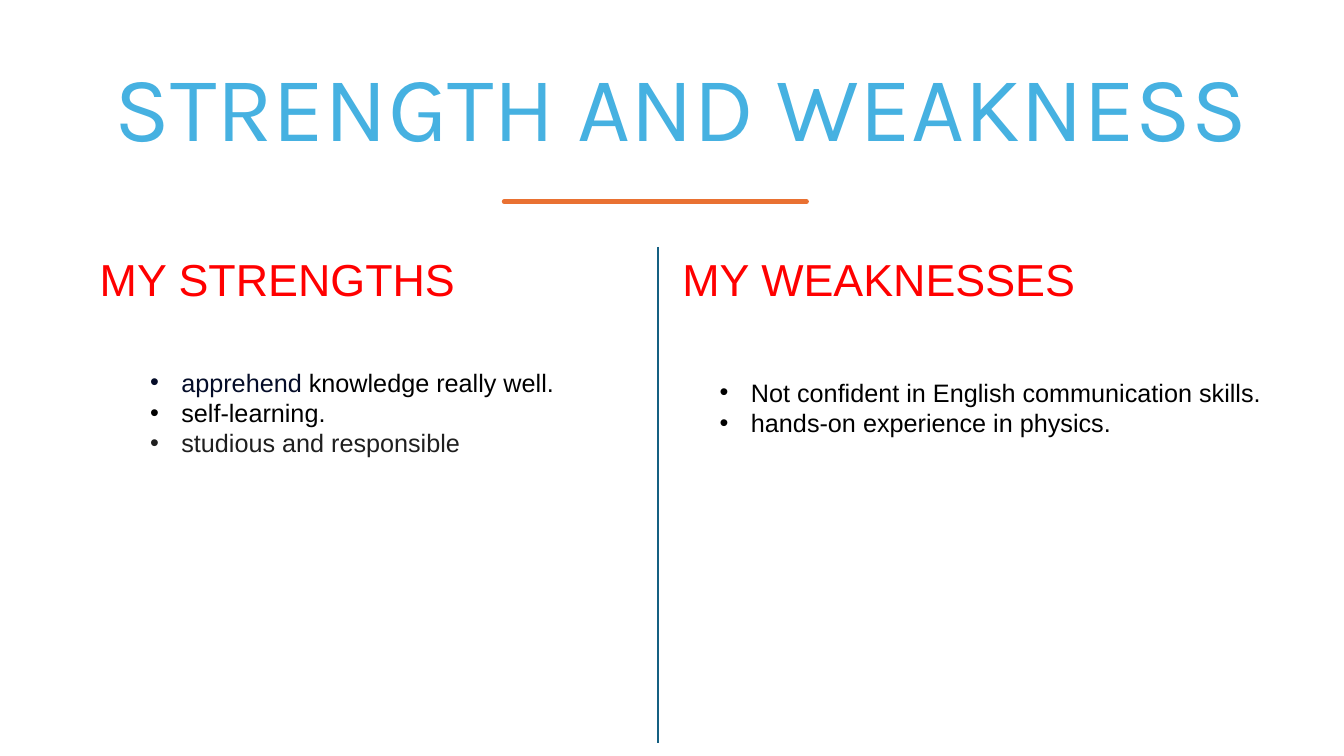
from lxml.etree import SubElement
from pptx import Presentation
from pptx.dml.color import RGBColor
from pptx.enum.shapes import MSO_CONNECTOR as Connector
from pptx.enum.text import MSO_ANCHOR as Anchor, PP_ALIGN as Align
from pptx.oxml.ns import qn
from pptx.util import Inches, Pt

STROKE_START = (4.87, 2.02)
STROKE_CURVES = [
    (5.06, 2.00, 5.35, 2.03, 5.59, 2.02),
    (5.82, 2.02, 6.00, 2.04, 6.27, 2.02),
    (6.54, 2.01, 6.72, 1.99, 6.95, 2.02),
    (7.19, 2.06, 7.35, 2.00, 7.75, 2.02),
    (8.14, 2.04, 8.17, 1.99, 8.47, 2.02),
    (8.47, 2.03, 8.47, 2.03, 8.47, 2.04),
    (8.20, 2.07, 7.98, 2.01, 7.75, 2.04),
    (7.51, 2.08, 7.39, 2.03, 7.13, 2.04),
    (6.88, 2.06, 6.73, 2.04, 6.45, 2.04),
    (6.17, 2.05, 5.96, 2.03, 5.77, 2.04),
    (5.57, 2.05, 5.20, 2.07, 4.87, 2.04),
    (4.87, 2.04, 4.87, 2.03, 4.87, 2.02),
]


def color(value):
    """Turn a hex string into a colour."""
    return RGBColor.from_string(value)


def write(para, text, font="Arial", size=18, ink="000000"):
    """Add a formatted run to a paragraph."""
    span = para.add_run()
    span.text = text
    span.font.name = font
    span.font.size = Pt(size)
    span.font.color.rgb = color(ink)


def flatten(start, curves, steps=10):
    """Return points along a chain of cubic curves."""
    points = []
    for curve in curves:
        knots = [start, curve[0:2], curve[2:4], curve[4:6]]
        for step in range(1, steps + 1):
            t = step / steps
            weights = ((1 - t) ** 3, 3 * t * (1 - t) ** 2, 3 * t * t * (1 - t), t ** 3)
            points.append(tuple(sum(w * knot[axis] for w, knot in zip(weights, knots))
                                for axis in (0, 1)))
        start = knots[-1]
    return points


class Page:
    """Draw the elements of one slide in a shared style."""

    title_ink = "46B1E1"
    heading_ink = "FF0000"
    stroke_ink = "E97132"
    divider_ink = "156082"

    def __init__(self, deck):
        """Add a title-only slide to the deck."""
        self.slide = deck.slides.add_slide(deck.slide_layouts[5])
        self.shapes = self.slide.shapes

    def title(self, text, left, top, width, height):
        """Place and format the title."""
        box = self.shapes.title
        box.left, box.top, box.width, box.height = map(Inches, (left, top, width, height))
        box.text_frame.vertical_anchor = Anchor.MIDDLE
        para = box.text_frame.paragraphs[0]
        para.alignment = Align.CENTER
        para.line_spacing = 0.9
        write(para, text, font="Karla", size=66, ink=self.title_ink)

    def text_frame(self, left, top, width, height, anchor=Anchor.TOP):
        """Add a wrapping text box and return its frame."""
        box = self.shapes.add_textbox(*map(Inches, (left, top, width, height)))
        box.text_frame.word_wrap = True
        box.text_frame.vertical_anchor = anchor
        return box.text_frame

    def heading(self, text, left, top, width, height):
        """Add a column heading."""
        frame = self.text_frame(left, top, width, height)
        write(frame.paragraphs[0], text, size=32, ink=self.heading_ink)

    def bullets(self, items, left, top, width, height, anchor=Anchor.TOP):
        """Add a bulleted list whose items are lists of text and colour."""
        frame = self.text_frame(left, top, width, height, anchor)
        for index, item in enumerate(items):
            para = frame.add_paragraph() if index else frame.paragraphs[0]
            properties = para._p.get_or_add_pPr()
            properties.set("marL", str(Inches(0.31)))
            properties.set("indent", str(-Inches(0.31)))
            SubElement(properties, qn("a:buFont")).set("typeface", "Arial")
            SubElement(properties, qn("a:buChar")).set("char", "•")
            for text, ink in item:
                write(para, text, ink=ink)

    def brush_stroke(self, start, curves):
        """Draw the hand-drawn rule under the title."""
        builder = self.shapes.build_freeform(*start, scale=Inches(1))
        builder.add_line_segments(flatten(start, curves), close=True)
        stroke = builder.convert_to_shape()
        stroke.shadow.inherit = False
        stroke.fill.solid()
        stroke.fill.fore_color.rgb = color(self.stroke_ink)
        stroke.line.color.rgb = color(self.stroke_ink)
        stroke.line.width = Pt(3.25)

    def divider(self, x, top, bottom):
        """Draw the vertical line between the columns."""
        line = self.shapes.add_connector(Connector.STRAIGHT, *map(Inches, (x, top, x, bottom)))
        line.line.color.rgb = color(self.divider_ink)
        line.line.width = Pt(1.5)
        SubElement(line._element.spPr, qn("a:effectLst"))


def main():
    """Build and save the slide."""
    deck = Presentation()
    deck.slide_width, deck.slide_height = Inches(13.33), Inches(7.5)
    page = Page(deck)
    page.title("STRENGTH AND WEAKNESS", 0.79, 0.36, 11.93, 1.5)
    page.brush_stroke(STROKE_START, STROKE_CURVES)
    page.bullets([
        [("Not confident in English communication skills.", "000000")],
        [("hands-on experience in physics.", "000000")],
    ], 7.04, 3.69, 6.67, 1.01)
    page.heading("MY WEAKNESSES", 6.67, 2.45, 7.17, 0.64)
    page.divider(6.53, 2.45, 7.37)
    page.bullets([
        [("apprehend", "040C28"), (" knowledge really well.", "000000")],
        [("self-learning.", "000000")],
        [("studious and responsible", "1F1F1F")],
    ], 1.39, 3.28, 4.25, 1.62, Anchor.MIDDLE)
    page.heading("MY STRENGTHS", 0.89, 2.45, 6.91, 0.64)
    deck.save("out.pptx")


if __name__ == "__main__":
    main()
